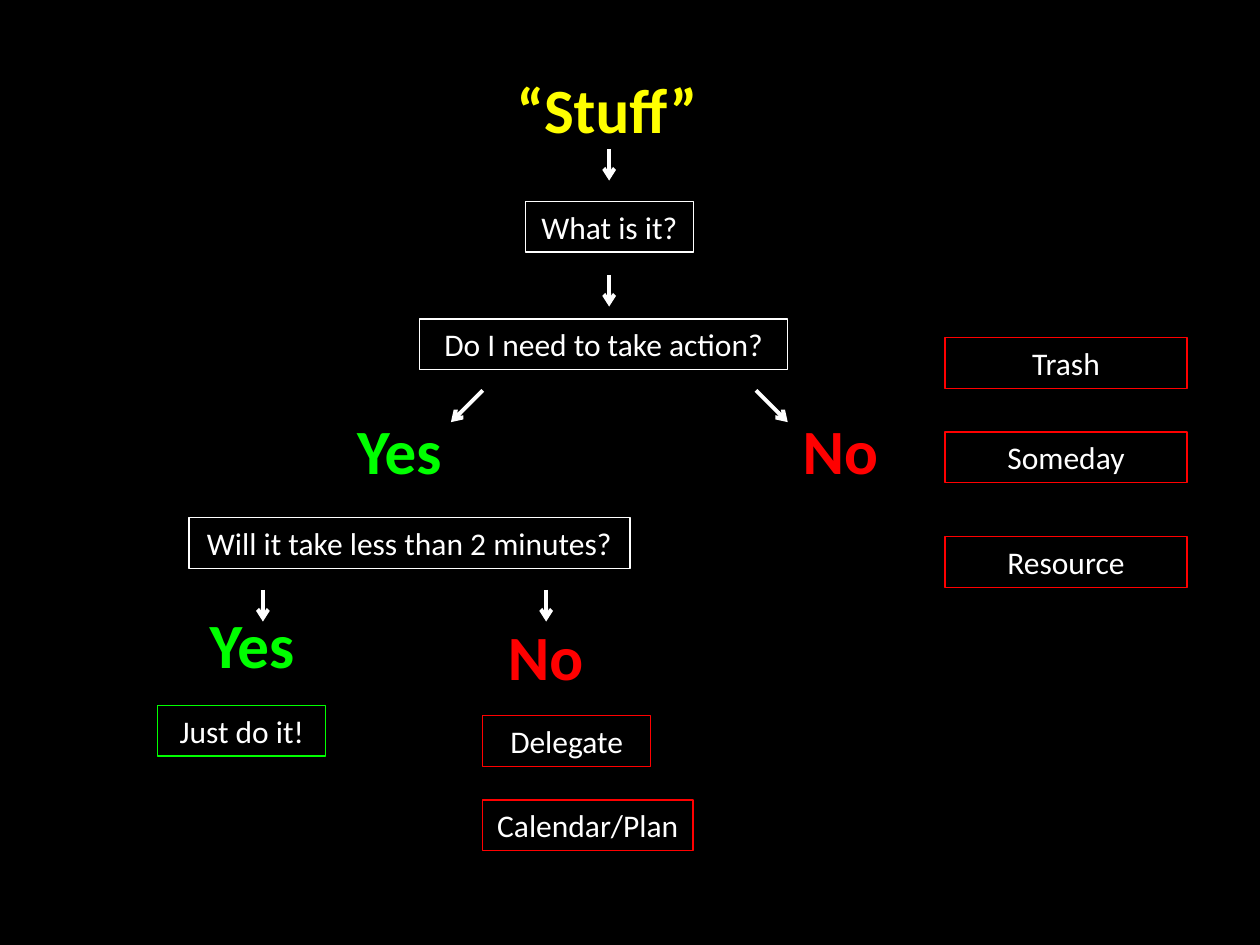
from dataclasses import dataclass

from lxml import etree
from pptx import Presentation
from pptx import util as u
from pptx.dml.color import RGBColor
from pptx.enum import shapes, text
from pptx.oxml.ns import qn


@dataclass(frozen=True)
class Theme:
    font: str = "Calibri"
    background: str = "000000"
    white: str = "FFFFFF"
    yellow: str = "FFFF00"
    green: str = "00FF00"
    red: str = "FF0000"
    box_size: int = 18
    heading_size: int = 36
    box_line: float = 0.75
    arrow_line: float = 2.25
    box_height: float = 1.02
    heading_height: float = 1.8
    answer_width: float = 2.54
    arrow_step: float = 0.64


class FlowchartSlide:
    def __init__(self, presentation, theme):
        self.theme = theme
        self.slide = presentation.slides.add_slide(presentation.slide_layouts[5])
        fill = self.slide.background.fill
        fill.solid()
        fill.fore_color.rgb = RGBColor.from_string(theme.background)

    def set_label(self, shape, wording, size, color, bold=False,
                  alignment=text.PP_ALIGN.CENTER, anchor=text.MSO_ANCHOR.TOP):
        frame = shape.text_frame
        frame.text = wording
        frame.word_wrap = True
        frame.auto_size = text.MSO_AUTO_SIZE.SHAPE_TO_FIT_TEXT
        frame.vertical_anchor = anchor
        paragraph = frame.paragraphs[0]
        paragraph.alignment = alignment
        font = paragraph.runs[0].font
        font.name = self.theme.font
        font.size = u.Pt(size)
        font.bold = bold
        font.color.rgb = RGBColor.from_string(color)

    def title(self, wording, left, top, width):
        shape = self.slide.shapes.title
        shape.left, shape.top = u.Cm(left), u.Cm(top)
        shape.width, shape.height = u.Cm(width), u.Cm(self.theme.heading_height)
        self.set_label(shape, wording, self.theme.heading_size, self.theme.yellow,
                       bold=True, alignment=text.PP_ALIGN.LEFT)

    def answer(self, wording, left, top, color):
        shape = self.slide.shapes.add_textbox(
            u.Cm(left), u.Cm(top),
            u.Cm(self.theme.answer_width), u.Cm(self.theme.heading_height))
        self.set_label(shape, wording, self.theme.heading_size, color, bold=True)

    def box(self, wording, left, top, width, color):
        shape = self.slide.shapes.add_shape(
            shapes.MSO_SHAPE.RECTANGLE, u.Cm(left), u.Cm(top),
            u.Cm(width), u.Cm(self.theme.box_height))
        shape.shadow.inherit = False
        shape.fill.background()
        shape.line.color.rgb = RGBColor.from_string(color)
        shape.line.width = u.Pt(self.theme.box_line)
        self.set_label(shape, wording, self.theme.box_size, self.theme.white,
                       anchor=text.MSO_ANCHOR.MIDDLE)

    def arrow(self, left, top, direction=0):
        step = self.theme.arrow_step
        connector = self.slide.shapes.add_connector(
            shapes.MSO_CONNECTOR.STRAIGHT, u.Cm(left), u.Cm(top),
            u.Cm(left + direction * step), u.Cm(top + step))
        connector.line.color.rgb = RGBColor.from_string(self.theme.white)
        connector.line.width = u.Pt(self.theme.arrow_line)
        properties = connector.element.spPr
        etree.SubElement(properties.find(qn("a:ln")), qn("a:tailEnd"), type="arrow")
        etree.SubElement(properties, qn("a:effectLst"))


def main():
    presentation = Presentation()
    presentation.slide_width = u.Cm(25.4)
    presentation.slide_height = u.Cm(19.05)
    theme = Theme()
    chart = FlowchartSlide(presentation, theme)

    chart.title("“Stuff”", 10.16, 1.3, 5.92)

    boxes = [
        ("What is it?", 10.59, 4.06, 3.39, theme.white),
        ("Do I need to take action?", 8.46, 6.43, 7.42, theme.white),
        ("Will it take less than 2 minutes?", 3.81, 10.44, 8.89, theme.white),
        ("Trash", 19.05, 6.81, 4.88, theme.red),
        ("Someday", 19.05, 8.71, 4.88, theme.red),
        ("Resource", 19.05, 10.82, 4.88, theme.red),
        ("Just do it!", 3.18, 14.22, 3.39, theme.green),
        ("Delegate", 9.73, 14.43, 3.39, theme.red),
        ("Calendar/Plan", 9.73, 16.13, 4.24, theme.red),
    ]
    for box in boxes:
        chart.box(*box)

    answers = [
        ("Yes", 6.78, 8.18, theme.green),
        ("No", 15.67, 8.18, theme.red),
        ("Yes", 3.81, 12.09, theme.green),
        ("No", 9.73, 12.32, theme.red),
    ]
    for answer in answers:
        chart.answer(*answer)

    arrows = [
        (12.28, 3.0, 0),
        (12.28, 5.54, 0),
        (15.24, 7.87, 1),
        (9.73, 7.87, -1),
        (5.3, 11.89, 0),
        (11.01, 11.89, 0),
    ]
    for arrow in arrows:
        chart.arrow(*arrow)

    presentation.save("out.pptx")


if __name__ == "__main__":
    main()
